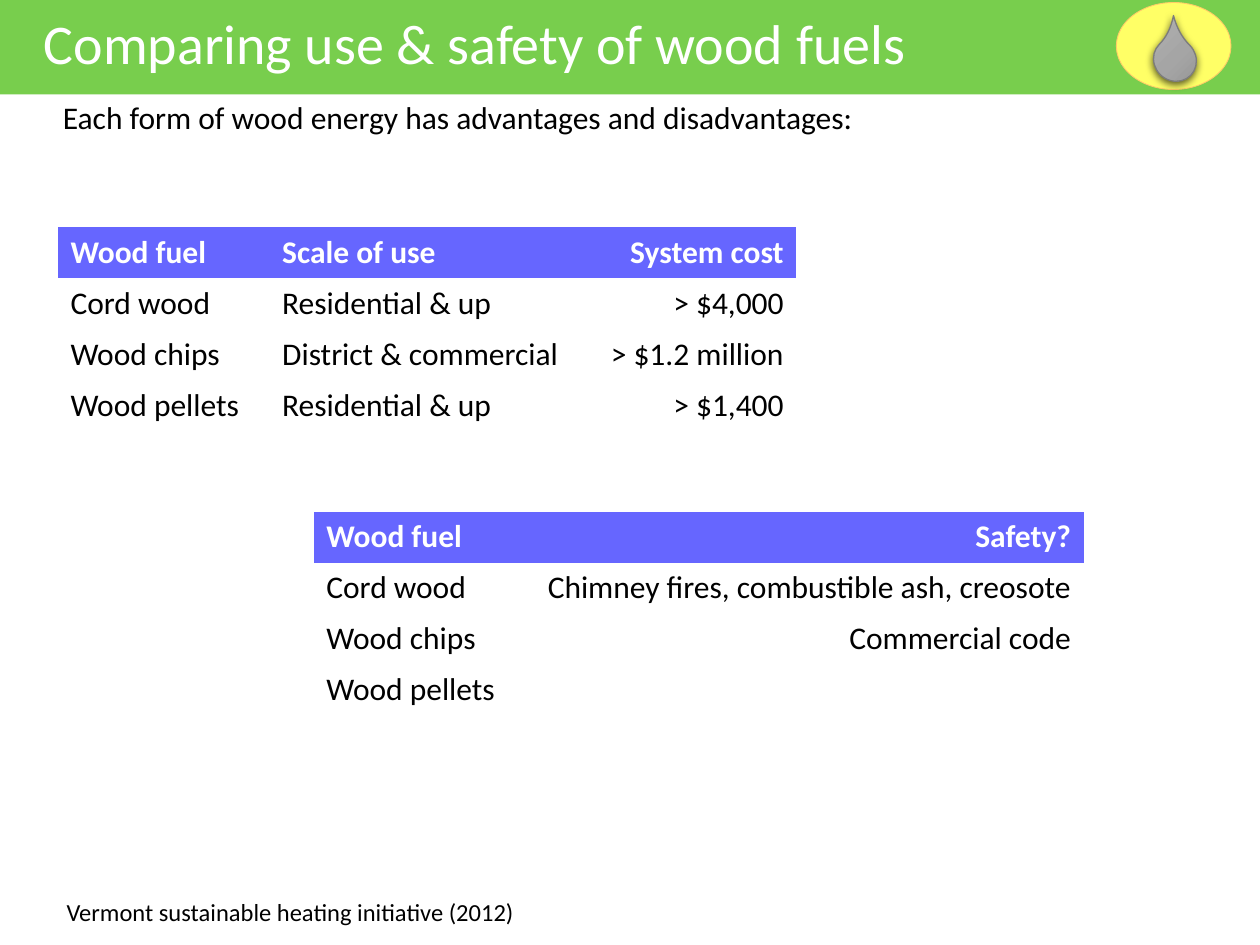
"""Build a slide comparing the use and safety of wood fuels."""
from copy import deepcopy
from dataclasses import dataclass

from lxml import etree
from pptx import Presentation
from pptx.dml.color import RGBColor
from pptx.enum.shapes import MSO_SHAPE
from pptx.enum.text import MSO_AUTO_SIZE, PP_ALIGN
from pptx.oxml.ns import qn
from pptx.util import Inches, Pt

RECT, OVAL, TEAR = MSO_SHAPE.RECTANGLE, MSO_SHAPE.OVAL, MSO_SHAPE.TEAR
LEFT, RIGHT = PP_ALIGN.LEFT, PP_ALIGN.RIGHT
FIT = MSO_AUTO_SIZE.SHAPE_TO_FIT_TEXT
PLAIN_TABLE = "{2D5ABB26-0587-4C30-8999-92F81FD0307C}"


@dataclass(frozen=True)
class Theme:
    font: str = "Calibri"
    title: int = 32
    body: int = 18
    source: int = 14
    white: str = "FFFFFF"
    black: str = "000000"
    band: str = "78CE4D"
    header: str = "6666FF"
    badge: str = "FFFF66"
    badge_line: str = "FFCC66"
    drop: tuple = ("AFAFAF", "A5A5A5", "939393")
    drop_line: str = "7C7C7C"


T = Theme()
prs = Presentation()
prs.slide_width, prs.slide_height = Inches(10), Inches(7.5)
COL, ROW = prs.slide_width / 100, prs.slide_height / 75
s = prs.slides.add_slide(prs.slide_layouts[6])


def grid(x, y, w, h):
    return [round(v) for v in (x * COL, y * ROW, w * COL, h * ROW)]


def style_text(p, size, color, bold=False, align=LEFT):
    p.alignment = align
    p.font.size = Pt(size)
    for r in p.runs:
        r.font.name, r.font.size, r.font.bold = T.font, Pt(size), bold
        r.font.color.rgb = RGBColor.from_string(color)


# name, box, fill, line, line width
shapes = {}
for name, kind, box, fill, line, width in (
    ("band", RECT, (0, 0, 100, 7.5), T.band, None, 0),
    ("badge", OVAL, (88.6, 0.2, 9.1, 6.9), T.badge, T.badge_line, 0.5),
    ("drop", TEAR, (91.6, 3, 3.3, 3.5), None, T.drop_line, 0.75),
):
    sp = s.shapes.add_shape(kind, *grid(*box))
    sp.shadow.inherit = False
    if fill:
        sp.fill.solid()
        sp.fill.fore_color.rgb = RGBColor.from_string(fill)
    if line:
        sp.line.color.rgb = RGBColor.from_string(line)
        sp.line.width = Pt(width)
    else:
        sp.line.fill.background()
    shapes[name] = sp

drop = shapes["drop"]
drop.rotation = 314.8
drop.adjustments[0] = 1.465
drop.fill.gradient()
drop.fill.gradient_angle = 270
stops = drop._element.spPr.find(qn("a:gradFill")).find(qn("a:gsLst"))
stops.insert(1, deepcopy(stops[0]))
for i, (stop, color) in enumerate(zip(drop.fill.gradient_stops, T.drop)):
    stop.position = i / 2
    stop.color.rgb = RGBColor.from_string(color)
effects = drop._element.spPr.find(qn("a:effectLst"))
shadow = etree.SubElement(effects, qn("a:outerShdw"), blurRad=str(Pt(4.5)),
                          dist=str(Pt(1.5)), dir="5400000", rotWithShape="0")
shade = etree.SubElement(shadow, qn("a:srgbClr"), val=T.black)
etree.SubElement(shade, qn("a:alpha"), val="63000")

for text, box, size, color, wrap, spacing in (
    ("Comparing use & safety of wood fuels", (2.5, 0.2, 82.4, 6.4),
     T.title, T.white, False, 1),
    ("Vermont sustainable heating initiative (2012)", (4.3, 70.7, 38, 3.4),
     T.source, T.black, False, 1),
    ("Each form of wood energy has advantages and disadvantages:",
     (4, 7, 91.3, 4.3), T.body, T.black, True, 1.1),
):
    tf = s.shapes.add_textbox(*grid(*box)).text_frame
    tf.word_wrap, tf.auto_size = wrap, FIT
    p = tf.paragraphs[0]
    p.text, p.line_spacing = text, spacing
    style_text(p, size, color)

FUEL_W, ROW_H = 16.8, 4.05
FUELS = ("Wood fuel", "Cord wood", "Wood chips", "Wood pellets")
SCALES = ("Scale of use", "Residential & up", "District & commercial", "Residential & up")
COSTS = ("System cost", "> $4,000", "> $1.2 million", "> $1,400")
SAFETY = ("Safety?", "Chimney fires, combustible ash, creosote", "Commercial code", "")

for x, y, widths, columns, align in (
    (4.6, 18, (FUEL_W, 25), (FUELS, SCALES), LEFT),
    (46.4, 18, (FUEL_W,), (COSTS,), RIGHT),
    (41.7, 40.6, (44.3,), (SAFETY,), RIGHT),
    (24.9, 40.6, (FUEL_W,), (FUELS,), LEFT),
):
    n = len(FUELS)
    frame = s.shapes.add_table(n, len(columns), *grid(x, y, sum(widths), n * ROW_H))
    table = frame.table
    table.horz_banding = table.first_row = False
    frame._element.find(".//" + qn("a:tableStyleId")).text = PLAIN_TABLE
    for j, (width, texts) in enumerate(zip(widths, columns)):
        table.columns[j].width = round(width * COL)
        for i, text in enumerate(texts):
            head = i == 0
            cell = table.cell(i, j)
            cell.fill.solid()
            cell.fill.fore_color.rgb = RGBColor.from_string(T.header if head else T.white)
            p = cell.text_frame.paragraphs[0]
            p.text = text
            style_text(p, T.body, T.white if head else T.black, head, align)

prs.save("out.pptx")
